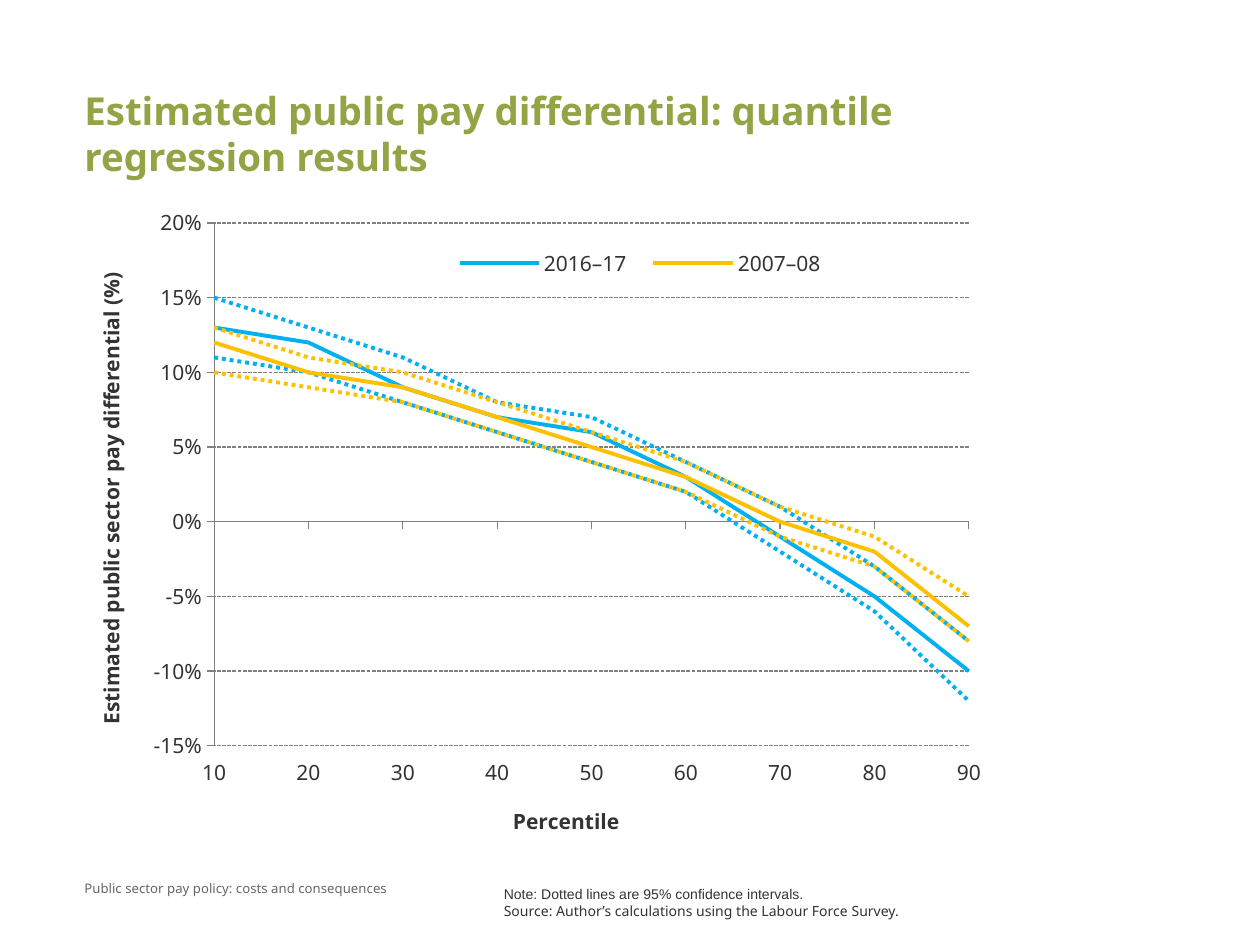
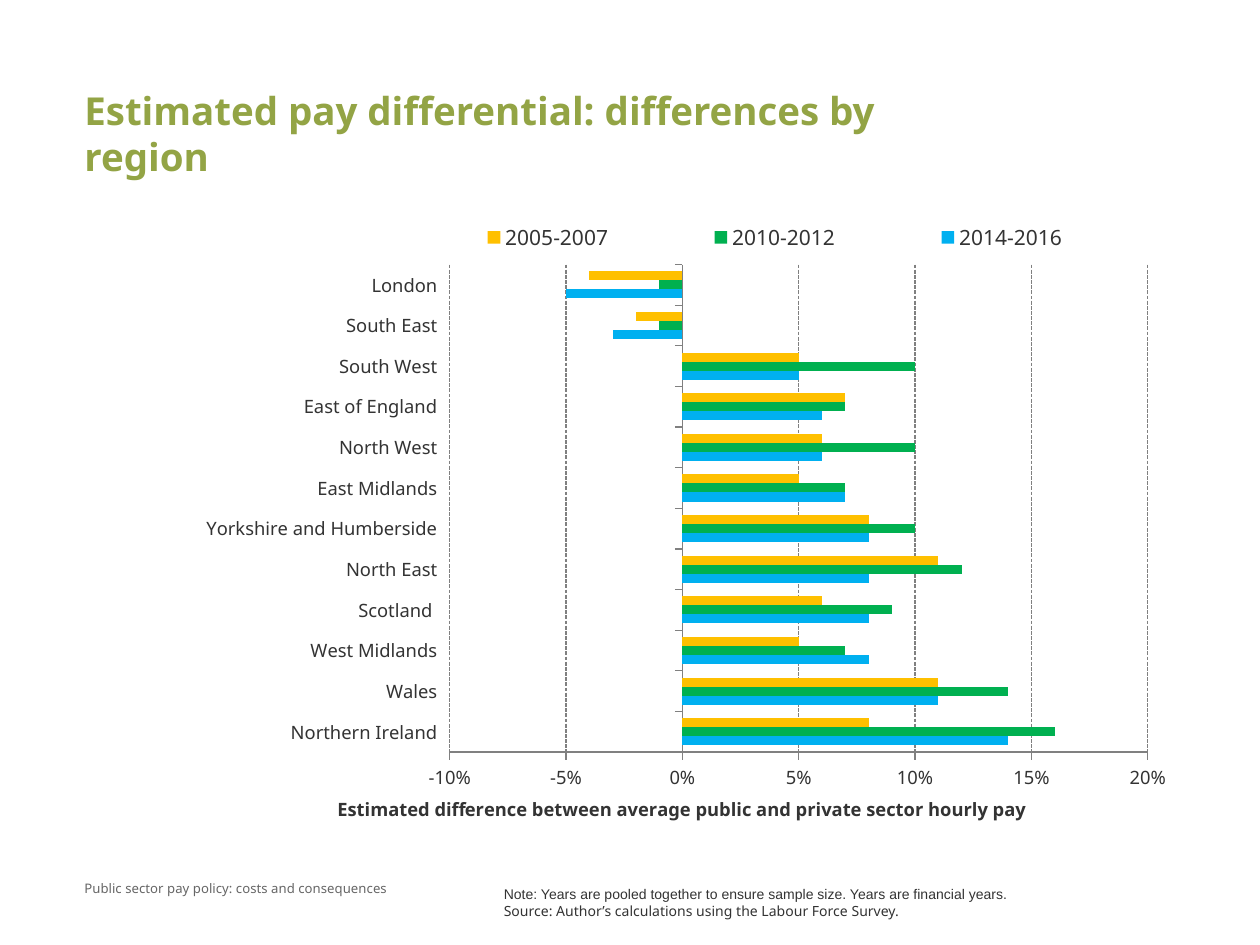
import dataclasses
import typing

import lxml.etree
import pptx
import pptx.chart.data
import pptx.dml.color
import pptx.enum.chart
import pptx.enum.dml
import pptx.enum.text
import pptx.oxml.ns
import pptx.util

PX = 9144  # EMU per px: 100 px to the inch
TITLE_ONLY = 5
ChartType = pptx.enum.chart.XL_CHART_TYPE


# Theme
@dataclasses.dataclass(frozen=True)
class Theme:
    font: str = "Noto Sans"
    note_font: str = "Arial"
    title: str = "93A445"
    text: str = "333333"
    footer: str = "666666"
    rule: str = "808080"
    blue: str = "00B0F0"
    green: str = "00B050"
    yellow: str = "FFC000"
    title_size: float = 22
    footer_size: float = 7.5
    note_size: float = 8
    legend_size: float = 12
    rule_width: float = 0.75
    series_width: float = 2.25


THEME = Theme()


class Box(typing.NamedTuple):
    left: int
    top: int
    width: int
    height: int

    def emu(self) -> list[int]:
        return [length * PX for length in self]


class Place(typing.NamedTuple):
    """Place in px from the top left corner of a chart."""
    x: int
    y: int
    w: int | None = None
    h: int | None = None

    def shares(self, chart_box: Box) -> dict[str, float]:
        """Give each known length as a share of the chart's size."""
        whole = (chart_box.width, chart_box.height) * 2
        return {side: length / total
                for side, length, total in zip(self._fields, self, whole)
                if length is not None}


class AxisCaption(typing.NamedTuple):
    wording: str
    place: Place


@dataclasses.dataclass(frozen=True)
class Series:
    name: str
    color: str
    values: list[float]
    dotted: bool = False


@dataclasses.dataclass(frozen=True)
class ChartSlide:
    title: str
    note: str
    kind: ChartType
    box: Box
    size: float
    plot: Place
    legend: Place
    value_range: tuple[float, float]
    value_caption: AxisCaption
    categories: list[str]
    series: list[Series]
    category_caption: AxisCaption | None = None


# Shared parts
TITLE_BOX = Box(67, 69, 701, 86)
FOOTER_BOX = Box(67, 699, 317, 40)
NOTE_BOX = Box(390, 698, 449, 37)
FOOTER = "Public sector pay policy: costs and consequences"
SOURCE = "Source: Author’s calculations using the Labour Force Survey."

QUANTILES = ChartSlide(
    title="Estimated public pay differential: quantile regression results",
    note="Note: Dotted lines are 95% confidence intervals.",
    kind=ChartType.LINE,
    box=Box(67, 162, 827, 512),
    size=12,
    plot=Place(103, 15, 599, 415),
    legend=Place(282, 29, 318, 36),
    value_range=(-0.15, 0.2),
    value_caption=AxisCaption("Estimated public sector pay differential (%)", Place(5, 51)),
    category_caption=AxisCaption("Percentile", Place(337, 474)),
    categories=[str(percentile) for percentile in range(10, 100, 10)],
    series=[
        Series("2016–17", THEME.blue,
               [0.13, 0.12, 0.09, 0.07, 0.06, 0.03, -0.01, -0.05, -0.1]),
        Series("Series 2", THEME.blue,
               [0.15, 0.13, 0.11, 0.08, 0.07, 0.04, 0.01, -0.03, -0.08], True),
        Series("Series 3", THEME.blue,
               [0.11, 0.1, 0.08, 0.06, 0.04, 0.02, -0.02, -0.06, -0.12], True),
        Series("2007–08", THEME.yellow,
               [0.12, 0.1, 0.09, 0.07, 0.05, 0.03, 0, -0.02, -0.07]),
        Series("Series 5", THEME.yellow,
               [0.13, 0.11, 0.1, 0.08, 0.06, 0.04, 0.01, -0.01, -0.05], True),
        Series("Series 6", THEME.yellow,
               [0.1, 0.09, 0.08, 0.06, 0.04, 0.02, -0.01, -0.03, -0.08], True),
    ],
)

REGIONS = ChartSlide(
    title="Estimated pay differential: differences by region",
    note="Note: Years are pooled together to ensure sample size. Years are financial years.",
    kind=ChartType.BAR_CLUSTERED,
    box=Box(59, 169, 890, 505),
    size=10.5,
    plot=Place(298, 41, 554, 387),
    legend=Place(249, 3, 614, 33),
    value_range=(-0.1, 0.2),
    value_caption=AxisCaption(
        "Estimated difference between average public and private sector hourly pay",
        Place(206, 459)),
    categories=["Northern Ireland", "Wales", "West Midlands", "Scotland ", "North East",
                "Yorkshire and Humberside", "East Midlands", "North West", "East of England",
                "South West", "South East", "London"],
    series=[
        Series("2014-2016", THEME.blue, [0.14, 0.11, 0.08, 0.08, 0.08, 0.08, 0.07,
                                         0.06, 0.06, 0.05, -0.03, -0.05]),
        Series("2010-2012", THEME.green, [0.16, 0.14, 0.07, 0.09, 0.12, 0.1, 0.07,
                                          0.1, 0.07, 0.1, -0.01, -0.01]),
        Series("2005-2007", THEME.yellow, [0.08, 0.11, 0.05, 0.06, 0.11, 0.08, 0.05,
                                           0.06, 0.07, 0.05, -0.02, -0.04]),
    ],
)


# Formatting
def style_font(font, size: float, color: str, name: str = THEME.font, bold: bool = False) -> None:
    font.size = pptx.util.Pt(size)
    font.name = name
    font.bold = bold
    font.color.rgb = pptx.dml.color.RGBColor.from_string(color)


def style_line(line, color: str, width: float, dash=None) -> None:
    line.color.rgb = pptx.dml.color.RGBColor.from_string(color)
    line.width = pptx.util.Pt(width)
    line.dash_style = dash


def clear_margins(frame) -> None:
    frame.margin_left = frame.margin_right = frame.margin_top = frame.margin_bottom = 0


def chart_tag(name: str, value: str | None = None):
    """Make one chart XML element, with its val attribute if given."""
    element = lxml.etree.Element(pptx.oxml.ns.qn(f"c:{name}"))
    if value is not None:
        element.set("val", value)
    return element


def set_layout(parent, shares: dict[str, float], after: str | None = None,
               inner: bool = False) -> None:
    for existing in parent.findall(pptx.oxml.ns.qn("c:layout")):
        parent.remove(existing)
    manual = chart_tag("manualLayout")
    if inner:
        manual.append(chart_tag("layoutTarget", "inner"))
    manual.extend([chart_tag("xMode", "edge"), chart_tag("yMode", "edge")])
    manual.extend(chart_tag(side, f"{share:.4f}") for side, share in shares.items())
    layout = chart_tag("layout")
    layout.append(manual)
    if after:
        parent.find(pptx.oxml.ns.qn(f"c:{after}")).addnext(layout)
    else:
        parent.insert(0, layout)


# Slide parts
def add_title(slide, wording: str) -> None:
    title = slide.shapes.title
    title.left, title.top, title.width, title.height = TITLE_BOX.emu()
    frame = title.text_frame
    frame.text = wording
    frame.word_wrap = True
    frame.auto_size = pptx.enum.text.MSO_AUTO_SIZE.NONE
    frame.vertical_anchor = pptx.enum.text.MSO_ANCHOR.TOP
    clear_margins(frame)
    heading = frame.paragraphs[0]
    heading.alignment = pptx.enum.text.PP_ALIGN.LEFT
    style_font(heading.runs[0].font, THEME.title_size, THEME.title, bold=True)


def add_footer(slide) -> None:
    frame = slide.shapes.add_textbox(*FOOTER_BOX.emu()).text_frame
    frame.text = FOOTER
    frame.word_wrap = True
    clear_margins(frame)
    style_font(frame.paragraphs[0].runs[0].font, THEME.footer_size, THEME.footer)


def add_note(slide, note: str) -> None:
    frame = slide.shapes.add_textbox(*NOTE_BOX.emu()).text_frame
    frame.text = f"{note}\n{SOURCE}"
    frame.word_wrap = True
    frame.auto_size = pptx.enum.text.MSO_AUTO_SIZE.SHAPE_TO_FIT_TEXT
    frame.vertical_anchor = pptx.enum.text.MSO_ANCHOR.MIDDLE
    for paragraph, font_name in zip(frame.paragraphs, (THEME.note_font, THEME.font)):
        style_font(paragraph.runs[0].font, THEME.note_size, THEME.text, font_name)


def style_axis(axis, caption: AxisCaption | None, size: float) -> None:
    axis.major_tick_mark = pptx.enum.chart.XL_TICK_MARK.OUTSIDE
    axis.minor_tick_mark = pptx.enum.chart.XL_TICK_MARK.NONE
    style_line(axis.format.line, THEME.rule, THEME.rule_width)
    axis.has_title = caption is not None
    if caption:
        frame = axis.axis_title.text_frame
        frame.text = caption.wording
        style_font(frame.paragraphs[0].runs[0].font, size, THEME.text, bold=True)


def style_series(plot, content: ChartSlide) -> None:
    for drawn, series in zip(plot.series, content.series):
        if content.kind == ChartType.LINE:
            dash = pptx.enum.dml.MSO_LINE.ROUND_DOT if series.dotted else None
            style_line(drawn.format.line, series.color, THEME.series_width, dash)
            drawn.smooth = False
        else:
            drawn.invert_if_negative = False
            drawn.format.fill.solid()
            drawn.format.fill.fore_color.rgb = pptx.dml.color.RGBColor.from_string(series.color)


def add_pay_chart(slide, content: ChartSlide) -> None:
    figures = pptx.chart.data.CategoryChartData(number_format="0%")
    figures.categories = content.categories
    for series in content.series:
        figures.add_series(series.name, series.values)
    chart = slide.shapes.add_chart(content.kind, *content.box.emu(), figures).chart
    chart.has_title = False
    style_font(chart.font, content.size, THEME.text)
    plot = chart.plots[0]
    plot.vary_by_categories = False
    style_series(plot, content)

    # Axes and grid
    style_axis(chart.category_axis, content.category_caption, content.size)
    chart.category_axis.tick_label_position = pptx.enum.chart.XL_TICK_LABEL_POSITION.LOW
    values = chart.value_axis
    style_axis(values, content.value_caption, content.size)
    values.minimum_scale, values.maximum_scale = content.value_range
    values.major_unit = 0.05
    values.tick_labels.number_format = "0%"
    values.tick_labels.number_format_is_linked = False
    values.has_major_gridlines = True
    style_line(values.major_gridlines.format.line, THEME.rule, THEME.rule_width,
               pptx.enum.dml.MSO_LINE.SQUARE_DOT)

    # Legend
    chart.has_legend = True
    chart.legend.position = pptx.enum.chart.XL_LEGEND_POSITION.RIGHT
    chart.legend.include_in_layout = False
    style_font(chart.legend.font, THEME.legend_size, THEME.text)

    # Places inside the chart
    root, box = chart.element, content.box
    legend = root.xpath(".//c:legend")[0]
    set_layout(root.xpath(".//c:plotArea")[0], content.plot.shares(box), inner=True)
    set_layout(legend, content.legend.shares(box), after="legendPos")
    for axis, caption in (("catAx", content.category_caption), ("valAx", content.value_caption)):
        if caption:
            caption_title = root.xpath(f".//c:{axis}/c:title")[0]
            set_layout(caption_title, caption.place.shares(box), after="tx")
    if content.kind == ChartType.LINE:
        start_lines_on_axis(root)
        hide_dotted_entries(legend, content.series)
    else:
        plot.gap_width, plot.overlap = 150, 0


def start_lines_on_axis(root) -> None:
    axis = root.xpath(".//c:valAx")[0]
    for crossing in axis.xpath("c:crossBetween"):
        axis.remove(crossing)
    axis.xpath("c:crosses")[0].addnext(chart_tag("crossBetween", "midCat"))


def hide_dotted_entries(legend, series: list[Series]) -> None:
    for index in reversed([i for i, line in enumerate(series) if line.dotted]):
        entry = chart_tag("legendEntry")
        entry.extend([chart_tag("idx", str(index)), chart_tag("delete", "1")])
        legend.xpath("c:legendPos")[0].addnext(entry)


def main() -> None:
    deck = pptx.Presentation()
    deck.slide_width, deck.slide_height = 1000 * PX, 750 * PX
    for content in (QUANTILES, REGIONS):
        slide = deck.slides.add_slide(deck.slide_layouts[TITLE_ONLY])
        add_title(slide, content.title)
        add_footer(slide)
        add_pay_chart(slide, content)
        add_note(slide, content.note)
    deck.save("out.pptx")


if __name__ == "__main__":
    main()
